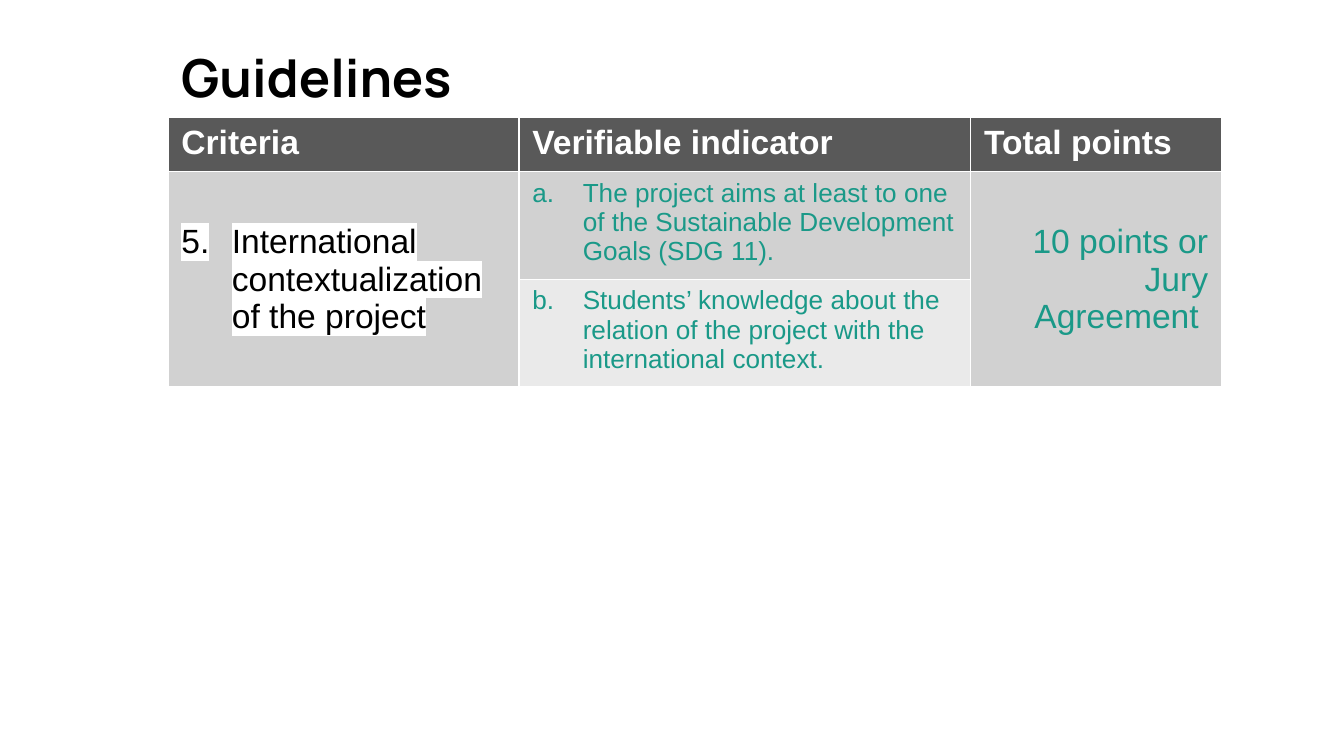
from dataclasses import dataclass
from typing import Optional

from lxml import etree
from pptx import Presentation
from pptx.dml.color import RGBColor
from pptx.enum.text import MSO_ANCHOR, PP_ALIGN
from pptx.oxml.ns import qn
from pptx.util import Pt

TOP, MIDDLE = MSO_ANCHOR.TOP, MSO_ANCHOR.MIDDLE
LEFT, RIGHT = PP_ALIGN.LEFT, PP_ALIGN.RIGHT


@dataclass(frozen=True)
class Theme:
    heading_font: str = "Manrope"
    body_font: str = "Arial"
    title_size: int = 28
    body_size: int = 18
    indicator_size: int = 14
    black: str = "000000"
    white: str = "FFFFFF"
    teal: str = "1A9988"
    header_fill: str = "595959"
    band_dark: str = "D1D1D1"
    band_light: str = "EAEAEA"


THEME = Theme()
LEFT_EDGE = 90
INDENT = 27
COLUMN_WIDTHS = (188, 242, 134.4)
ROW_HEIGHTS = (29.2, 54.6, 54.6)


@dataclass(frozen=True)
class Numbering:
    scheme: str
    start: int


@dataclass(frozen=True)
class CellText:
    row: int
    column: int
    text: str
    fill: str
    color: str = THEME.teal
    size: int = THEME.body_size
    bold: bool = False
    align: PP_ALIGN = LEFT
    anchor: MSO_ANCHOR = TOP
    numbering: Optional[Numbering] = None
    highlight: Optional[str] = None
    row_span: int = 1


HEADERS = ("Criteria", "Verifiable indicator", "Total points")
INDICATORS = (
    ("The project aims at least to one of the Sustainable Development Goals (SDG 11).",
     THEME.band_dark),
    ("Students’ knowledge about the relation of the project with the international context.",
     THEME.band_light),
)
CELLS = [
    *(CellText(0, column, header, THEME.header_fill, THEME.white, bold=True)
      for column, header in enumerate(HEADERS)),
    CellText(1, 0, "International contextualization of the project", THEME.band_dark,
             THEME.black, anchor=MIDDLE, numbering=Numbering("arabicPeriod", 5),
             highlight=THEME.white, row_span=2),
    *(CellText(row, 1, indicator, fill, size=THEME.indicator_size,
               numbering=Numbering("alphaLcPeriod", row))
      for row, (indicator, fill) in enumerate(INDICATORS, start=1)),
    CellText(1, 2, "10 points or Jury Agreement ", THEME.band_dark,
             align=RIGHT, anchor=MIDDLE, row_span=2),
]


def number_paragraph(paragraph, numbering: Numbering) -> None:
    """Add automatic numbering with a hanging indent."""
    properties = paragraph._p.get_or_add_pPr()
    properties.set("marL", str(Pt(INDENT)))
    properties.set("indent", str(-Pt(INDENT)))
    etree.SubElement(properties, qn("a:buAutoNum"), type=numbering.scheme,
                     startAt=str(numbering.start))


def highlight_run(run, color: str) -> None:
    highlight = etree.SubElement(run._r.get_or_add_rPr(), qn("a:highlight"))
    etree.SubElement(highlight, qn("a:srgbClr"), val=color)


def style_font(font, name: str, size: int, color: str, bold: bool) -> None:
    font.name, font.size, font.bold = name, Pt(size), bold
    font.color.rgb = RGBColor.from_string(color)


def add_title(slide, title: str) -> None:
    frame = slide.shapes.add_textbox(Pt(LEFT_EDGE), Pt(17), Pt(459), Pt(42.5)).text_frame
    frame.word_wrap = True
    frame.vertical_anchor = TOP
    frame.margin_left = frame.margin_right = Pt(7.2)
    frame.margin_top = frame.margin_bottom = Pt(7.2)
    paragraph = frame.paragraphs[0]
    run = paragraph.add_run()
    run.text = title
    style_font(paragraph.font, THEME.heading_font, THEME.title_size, THEME.black, True)
    highlight_run(run, THEME.white)


def fill_cell(table, content: CellText) -> None:
    cell = table.cell(content.row, content.column)
    if content.row_span > 1:
        cell.merge(table.cell(content.row + content.row_span - 1, content.column))
    cell.fill.solid()
    cell.fill.fore_color.rgb = RGBColor.from_string(content.fill)
    cell.vertical_anchor = content.anchor
    paragraph = cell.text_frame.paragraphs[0]
    paragraph.alignment = content.align
    if content.numbering:
        number_paragraph(paragraph, content.numbering)
    run = paragraph.add_run()
    run.text = content.text
    style_font(paragraph.font, THEME.body_font, content.size, content.color, content.bold)
    if content.highlight:
        highlight_run(run, content.highlight)


def add_criteria_table(slide) -> None:
    table = slide.shapes.add_table(
        len(ROW_HEIGHTS), len(COLUMN_WIDTHS), Pt(LEFT_EDGE), Pt(62.8),
        Pt(sum(COLUMN_WIDTHS)), Pt(sum(ROW_HEIGHTS))).table
    table.horz_banding = False
    for column, width in zip(table.columns, COLUMN_WIDTHS):
        column.width = Pt(width)
    for row, height in zip(table.rows, ROW_HEIGHTS):
        row.height = Pt(height)
    for content in CELLS:
        fill_cell(table, content)


def main() -> None:
    presentation = Presentation()
    presentation.slide_width, presentation.slide_height = Pt(720), Pt(405)
    slide = presentation.slides.add_slide(presentation.slide_layouts[6])
    add_title(slide, "Guidelines")
    add_criteria_table(slide)
    presentation.save("out.pptx")


if __name__ == "__main__":
    main()
